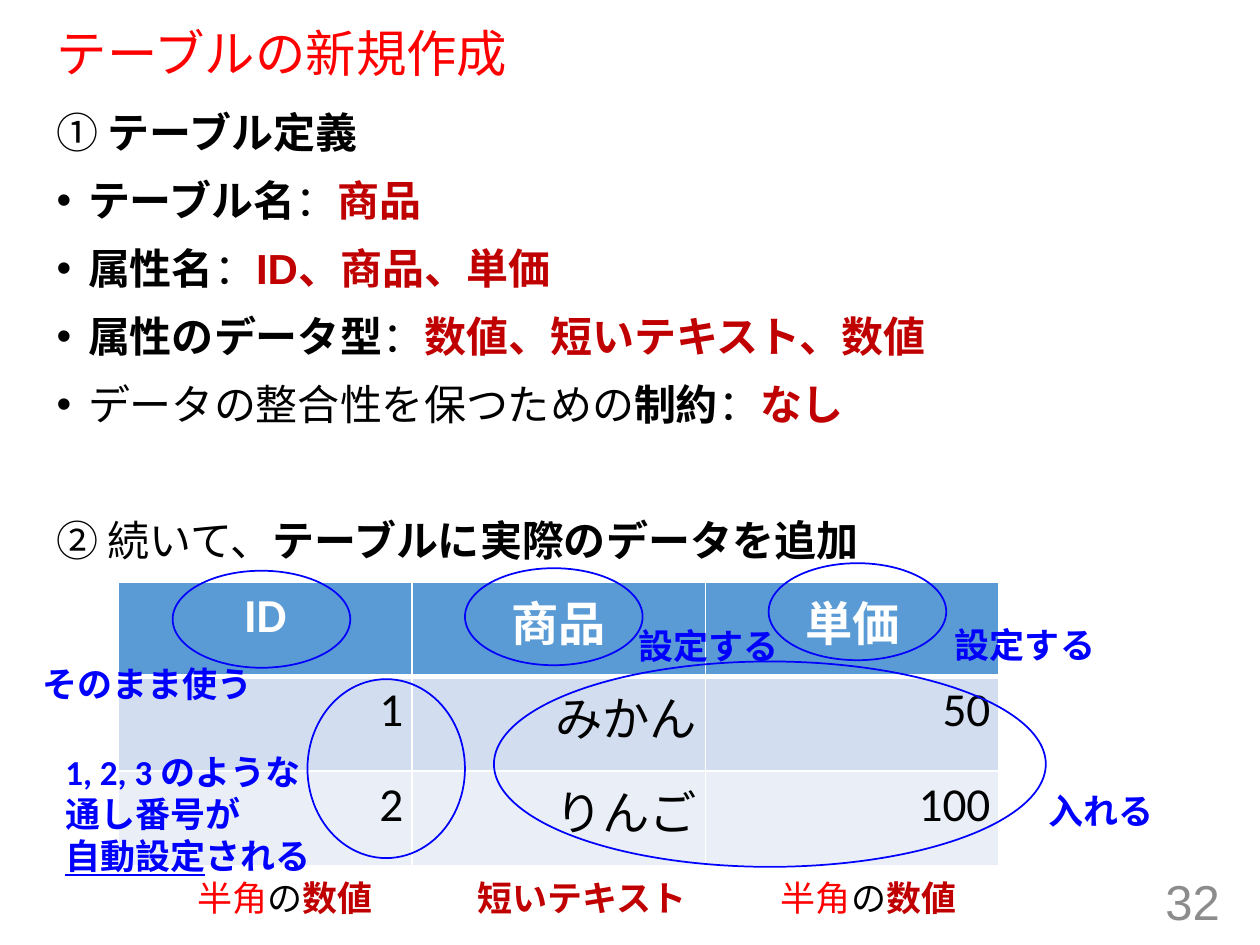
from lxml.etree import SubElement
from pptx import Presentation
from pptx.dml.color import RGBColor
from pptx.enum.shapes import MSO_SHAPE
from pptx.enum.text import MSO_ANCHOR as ANCHOR, MSO_AUTO_SIZE as AUTO, PP_ALIGN as ALIGN
from pptx.oxml.ns import qn
from pptx.util import Pt

PX = 9144  # 100 px to the inch
RED, DARK_RED, BLUE = "FF0000", "C00000", "0000FF"
BLACK, WHITE, GRAY = "000000", "FFFFFF", "8C8C8C"
HEADER, BANDS = "5B9BD5", ("D2DEEF", "EAEFF7")


def emu(box):
    return [v * PX for v in box]


def rgb(color):
    return RGBColor.from_string(color)


def add_run(p, text, size, color, bold=False, underline=False, font="Calibri"):
    r = p.add_run()
    r.text = text
    f = r.font
    f.name, f.size, f.bold, f.underline = font, Pt(size), bold, underline
    f.color.rgb = rgb(color)


def add_text(slide, box, paragraphs, size, wrap=True, font="Calibri"):
    """Each paragraph is a list of (text, color, bold, underline) runs."""
    tf = slide.shapes.add_textbox(*emu(box)).text_frame
    tf.word_wrap = wrap
    tf.auto_size = AUTO.NONE if wrap else AUTO.SHAPE_TO_FIT_TEXT
    for i, runs in enumerate(paragraphs):
        p = tf.add_paragraph() if i else tf.paragraphs[0]
        for text, *style in runs:
            add_run(p, text, size, *style, font=font)
    return tf


def add_title(slide, box, text):
    sp = slide.shapes.title
    sp.left, sp.top, sp.width, sp.height = emu(box)
    tf = sp.text_frame
    tf.auto_size, tf.vertical_anchor = AUTO.NONE, ANCHOR.MIDDLE
    p = tf.paragraphs[0]
    p.alignment, p.line_spacing = ALIGN.LEFT, 0.9
    add_run(p, text, 28.8, RED, font="Arial")


def add_bullet(p):
    pPr = p._p.get_or_add_pPr()
    pPr.set("marL", str(25 * PX))
    pPr.set("indent", str(-25 * PX))
    SubElement(pPr, qn("a:buFont")).set("typeface", "Arial")
    SubElement(pPr, qn("a:buChar")).set("char", "•")


def add_body(slide, box):
    colon = ("：", BLACK)
    steps = [
        [("① ", BLACK), ("テーブル定義", BLACK, True)],
        [("テーブル名", BLACK, True), colon, ("商品", DARK_RED, True)],
        [("属性名", BLACK, True), colon, ("ID、商品、単価", DARK_RED, True)],
        [("属性のデータ型", BLACK, True), colon,
         ("数値、短いテキスト、数値", DARK_RED, True)],
        [("データの整合性を保つための", BLACK), ("制約", BLACK, True), colon,
         ("なし", DARK_RED, True)],
        [("② 続いて、", BLACK), ("テーブルに実際のデータを追加", BLACK, True)],
    ]
    paragraphs = add_text(slide, box, steps, 24, font="Arial").paragraphs
    for p in paragraphs:
        p.space_before = Pt(10)
    for p in paragraphs[1:-1]:
        add_bullet(p)
    paragraphs[-1].space_before = Pt(49)


def set_borders(cell, bottom):
    tcPr = cell._tc.get_or_add_tcPr()
    for i, (side, width) in enumerate(zip("LRTB", (1, 1, 1, bottom))):
        ln = tcPr.makeelement(qn("a:ln" + side), {"w": str(Pt(width))})
        fill = SubElement(ln, qn("a:solidFill"))
        SubElement(fill, qn("a:srgbClr")).set("val", WHITE)
        tcPr.insert(i, ln)


def add_product_table(slide, box):
    rows = [("ID", "商品", "単価"), ("1", "みかん", "50"), ("2", "りんご", "100")]
    table = slide.shapes.add_table(3, 3, *emu(box)).table
    for r, row in enumerate(rows):
        header = r == 0
        for c, text in enumerate(row):
            cell = table.cell(r, c)
            cell.margin_left = cell.margin_right = 7 * PX
            cell.margin_top = cell.margin_bottom = 4 * PX
            cell.fill.solid()
            cell.fill.fore_color.rgb = rgb(HEADER if header else BANDS[r - 1])
            set_borders(cell, 3 if header else 1)
            p = cell.text_frame.paragraphs[0]
            p.alignment = ALIGN.CENTER if header else ALIGN.RIGHT
            add_run(p, text, 27, WHITE if header else BLACK, header)


def add_type_labels(slide, top):
    number = [("半角", RED), ("の", BLACK), ("数値", DARK_RED, True)]
    short_text = [("短いテキスト", DARK_RED, True)]
    for left, width, runs in ((147, 160, number), (369, 188, short_text),
                              (610, 160, number)):
        add_text(slide, (left, top, width, 44), [runs], 20, wrap=False)


def add_ellipse(slide, box):
    sp = slide.shapes.add_shape(MSO_SHAPE.OVAL, *emu(box))
    sp.shadow.inherit = False
    sp.fill.background()
    sp.line.color.rgb = rgb(BLUE)
    sp.line.width = Pt(1)


def add_annotations(slide):
    for box in ((137, 453, 141, 77), (369, 451, 141, 77), (610, 447, 141, 77),
                (244, 539, 125, 142), (392, 525, 438, 163)):
        add_ellipse(slide, box)
    for box, text in (((24, 521, 188, 44), "そのまま使う"),
                      ((497, 491, 132, 44), "設定する"),
                      ((748, 490, 132, 44), "設定する"),
                      ((822, 622, 104, 44), "入れる")):
        add_text(slide, box, [[(text, BLUE, True)]], 20, wrap=False)
    numbering = [[("1, 2, 3 のような", BLUE, True)],
                 [("通し番号が", BLUE, True)],
                 [("自動設定", BLUE, True, True), ("される", BLUE, True)]]
    add_text(slide, (42, 591, 217, 111), numbering, 20, wrap=False)


def add_page_number(slide, box, number):
    tf = add_text(slide, box, [[(number, GRAY)]], 28, font="Arial")
    tf.vertical_anchor = ANCHOR.MIDDLE
    tf.paragraphs[0].alignment = ALIGN.RIGHT


def main():
    prs = Presentation()
    prs.slide_width, prs.slide_height = emu((1000, 750))
    slide = prs.slides.add_slide(prs.slide_layouts[5])
    add_title(slide, (35, 19, 925, 51), "テーブルの新規作成")
    add_body(slide, (35, 80, 925, 643))
    add_page_number(slide, (753, 695, 225, 40), "32")
    add_product_table(slide, (94, 462, 699, 225))
    add_type_labels(slide, 691)
    add_annotations(slide)
    prs.save("out.pptx")


if __name__ == "__main__":
    main()
